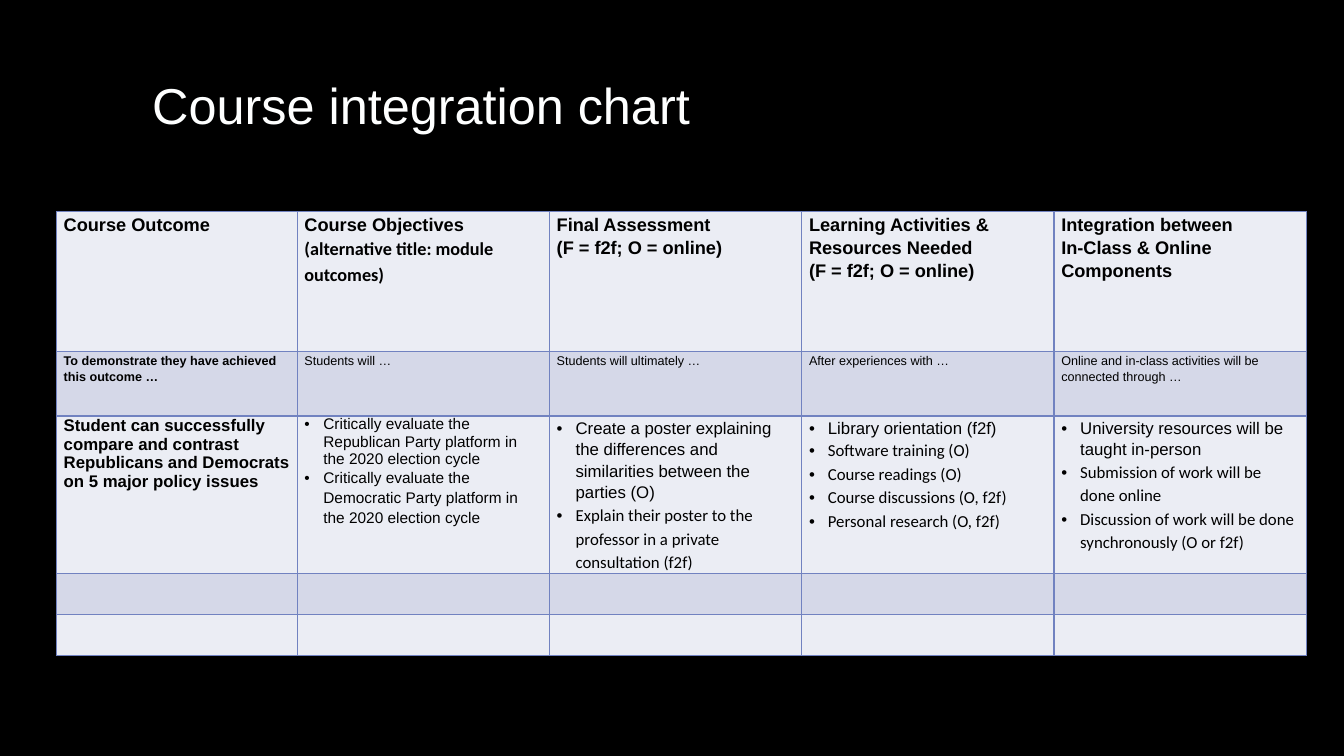
from lxml.etree import SubElement
from pptx import Presentation
from pptx.dml.color import RGBColor
from pptx.enum.text import MSO_ANCHOR, PP_ALIGN
from pptx.oxml.ns import qn
from pptx.util import Pt

TITLE = "Course integration chart"
COLOURS = {"background": "000000", "title": "FEFFFF", "text": "000000",
           "border": "7182C0", "light": "EBEDF4", "dark": "D5D8E8"}
LOOSE = 1.15
BULLET_INDENT = 13.5

HEADING = {"size": 13, "bold": True, "spacing": LOOSE}
LEAD_IN = {"size": 9, "spacing": LOOSE}
LEAD_IN_BOLD = LEAD_IN | {"bold": True}
OUTCOME = {"size": 12, "bold": True}
OBJECTIVE = {"size": 11, "bullet": True}
ACTIVITY = {"size": 12, "bullet": True, "spacing": LOOSE}
CALIBRI = {"name": "Calibri"}

# Each cell is a list of (text, format) paragraphs.
ROWS = [
    [
        [("Course Outcome", HEADING)],
        [("Course Objectives", HEADING),
         ("(alternative title: module outcomes)", HEADING | CALIBRI)],
        [("Final Assessment", HEADING), ("(F = f2f; O = online)", HEADING)],
        [("Learning Activities & Resources Needed", HEADING),
         ("(F = f2f; O = online)", HEADING)],
        [("Integration between \vIn-Class & Online Components", HEADING)],
    ],
    [
        [("To demonstrate they have achieved this outcome …", LEAD_IN_BOLD)],
        [("Students will …", LEAD_IN)],
        [("Students will ultimately …", LEAD_IN)],
        [("After experiences with …", LEAD_IN)],
        [("Online and in-class activities will be connected through …", LEAD_IN)],
    ],
    [
        [("Student can successfully compare and contrast Republicans and "
          "Democrats on 5 major policy issues", OUTCOME)],
        [("Critically evaluate the Republican Party platform in the 2020 "
          "election cycle", OBJECTIVE),
         ("Critically evaluate the Democratic Party platform in the 2020 "
          "election cycle", OBJECTIVE | {"spacing": LOOSE})],
        [("Create a poster explaining the differences and similarities "
          "between the parties (O)", ACTIVITY),
         ("Explain their poster to the professor in a private consultation "
          "(f2f)", ACTIVITY | CALIBRI)],
        [("Library orientation (f2f)", ACTIVITY),
         ("Software training (O)", ACTIVITY | CALIBRI),
         ("Course readings (O)", ACTIVITY | CALIBRI),
         ("Course discussions (O, f2f)", ACTIVITY | CALIBRI),
         ("Personal research (O, f2f)", ACTIVITY | CALIBRI)],
        [("University resources will be taught in-person", ACTIVITY),
         ("Submission of work will be done online", ACTIVITY | CALIBRI),
         ("Discussion of work will be done synchronously (O or f2f)",
          ACTIVITY | CALIBRI)],
    ],
    [[]] * 5,
    [[]] * 5,
]
TABLE_LEFT, TABLE_TOP = 40.3, 151.2
COLUMN_WIDTHS = [172, 180.2, 180.2, 180.2, 180.2]
ROW_HEIGHTS = [100, 46, 112, 29.5, 29.5]


def colour(name):
    return RGBColor.from_string(COLOURS[name])


def format_text(paragraph, size, spacing=1.0, bold=False, name="Arial",
                bullet=False, ink="text"):
    if bullet:
        properties = paragraph._p.get_or_add_pPr()
        properties.set("marL", str(Pt(BULLET_INDENT)))
        properties.set("indent", str(-Pt(BULLET_INDENT)))
        SubElement(properties, qn("a:buFont"), typeface="Arial")
        SubElement(properties, qn("a:buChar"), char="•")
    paragraph.line_spacing = spacing
    for run in paragraph.runs:
        for attribute, value in {"size": Pt(size), "bold": bold, "name": name}.items():
            setattr(run.font, attribute, value)
        run.font.color.rgb = colour(ink)
    for line_break in paragraph._p.findall(qn("a:br")):
        SubElement(line_break, qn("a:rPr"), sz=str(size * 100))


def add_borders(cell):
    properties = cell._tc.get_or_add_tcPr()
    for side in ("lnL", "lnR", "lnT", "lnB"):
        line = SubElement(properties, qn(f"a:{side}"), w=str(Pt(1)))
        fill = SubElement(line, qn("a:solidFill"))
        SubElement(fill, qn("a:srgbClr"), val=COLOURS["border"])


def fill_cell(cell, paragraphs, shade):
    margins = {"margin_left": 5.2, "margin_right": 5.2,
               "margin_top": 0, "margin_bottom": 0}
    for attribute, value in margins.items():
        setattr(cell, attribute, Pt(value))
    add_borders(cell)
    cell.fill.solid()
    cell.fill.fore_color.rgb = colour(shade)
    frame = cell.text_frame
    for index, (text, text_format) in enumerate(paragraphs):
        paragraph = frame.add_paragraph() if index else frame.paragraphs[0]
        paragraph.text = text
        format_text(paragraph, **text_format)


def add_title(slide):
    title = slide.shapes.title
    place = {"left": 101.5, "top": 34.6, "width": 756.7, "height": 85}
    for attribute, value in place.items():
        setattr(title, attribute, Pt(value))
    title.text_frame.text = TITLE
    title.text_frame.vertical_anchor = MSO_ANCHOR.MIDDLE
    paragraph = title.text_frame.paragraphs[0]
    paragraph.alignment = PP_ALIGN.LEFT
    format_text(paragraph, size=36, spacing=0.9, ink="title")


def add_course_table(slide):
    table = slide.shapes.add_table(
        len(ROWS), len(COLUMN_WIDTHS), Pt(TABLE_LEFT), Pt(TABLE_TOP),
        Pt(sum(COLUMN_WIDTHS)), Pt(sum(ROW_HEIGHTS))).table
    for column, width in zip(table.columns, COLUMN_WIDTHS):
        column.width = Pt(width)
    for row_index, (row, height) in enumerate(zip(ROWS, ROW_HEIGHTS)):
        table.rows[row_index].height = Pt(height)
        shade = "dark" if row_index % 2 else "light"
        for column_index, paragraphs in enumerate(row):
            fill_cell(table.cell(row_index, column_index), paragraphs, shade)


def main():
    presentation = Presentation()
    presentation.slide_width, presentation.slide_height = Pt(960), Pt(540)
    slide = presentation.slides.add_slide(presentation.slide_layouts[5])
    slide.background.fill.solid()
    slide.background.fill.fore_color.rgb = colour("background")
    add_title(slide)
    add_course_table(slide)
    presentation.save("out.pptx")


if __name__ == "__main__":
    main()
